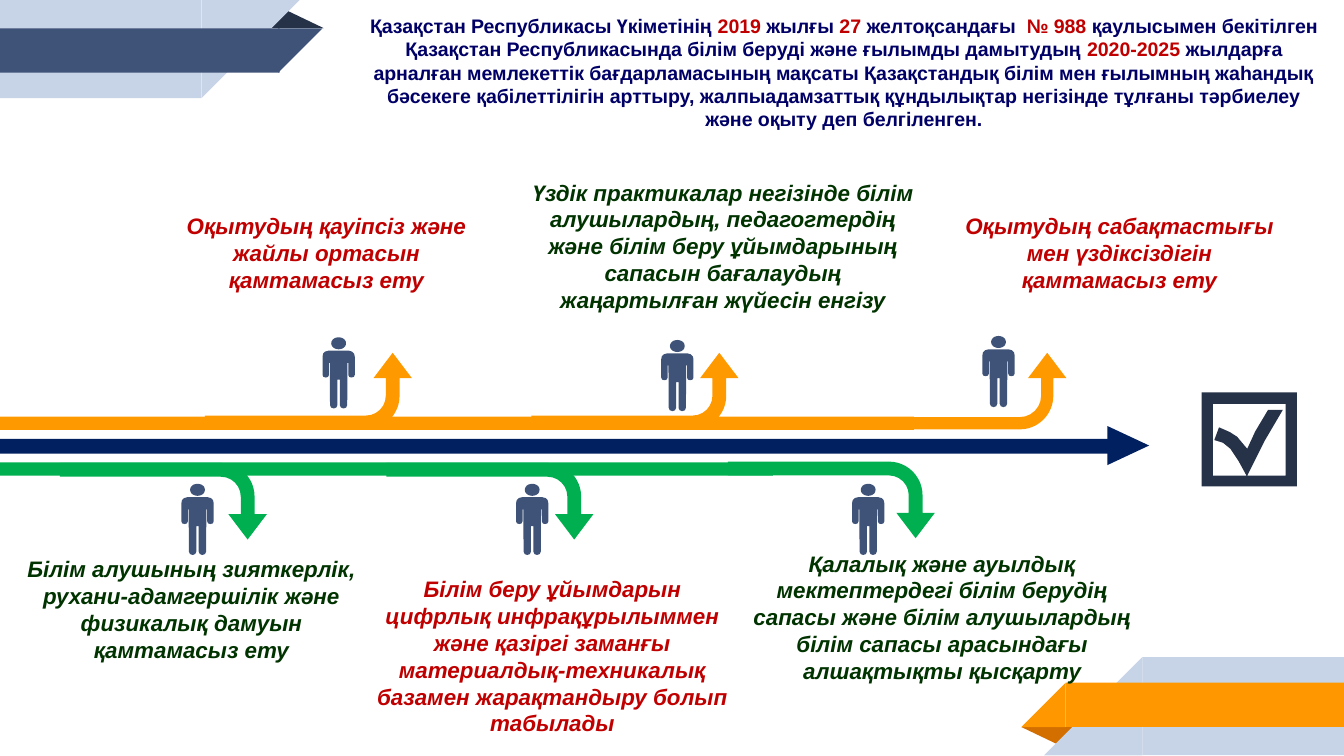
"""Build a slide of education programme goals along a branching arrow."""
from math import cos, pi, sin
from typing import NamedTuple

from pptx import Presentation
from pptx.dml.color import RGBColor
from pptx.enum.shapes import MSO_SHAPE
from pptx.enum.text import MSO_ANCHOR, MSO_AUTO_SIZE, PP_ALIGN
from pptx.util import Inches, Pt

COLORS = {
    "pale": "C7D3E6", "slate": "3F5378", "dark": "263248", "rust": "D26F00",
    "amber": "FF9800", "orange": "FF9900", "green": "00B050", "navy": "002060",
    "ink": "000066", "red": "C00000", "forest": "003300",
}
RECT, TRI = MSO_SHAPE.RECTANGLE, MSO_SHAPE.ISOSCELES_TRIANGLE
WEDGE, BEND = MSO_SHAPE.RIGHT_TRIANGLE, MSO_SHAPE.BENT_ARROW
HEAD = MSO_SHAPE.FLOWCHART_EXTRACT
MILLI = Inches(1) / 1000


class Part(NamedTuple):
    kind: MSO_SHAPE
    box: tuple
    color: str
    turn: int = 0
    flip: bool = False
    adj: tuple = ()


class Goal(NamedTuple):
    box: tuple
    color: str
    text: str


def rgb(name: str) -> RGBColor:
    """Look up a colour by name."""
    return RGBColor.from_string(COLORS[name])


def paint(shape, color: str) -> None:
    """Fill a shape flat, without line or shadow."""
    shape.shadow.inherit = False
    shape.fill.solid()
    shape.fill.fore_color.rgb = rgb(color)
    shape.line.fill.background()


def draw(shapes, part: Part) -> None:
    """Draw a preset shape."""
    shape = shapes.add_shape(part.kind, *map(Inches, part.box))
    paint(shape, part.color)
    shape.rotation = part.turn
    if part.flip:
        shape.element.spPr.xfrm.set("flipH", "1")
    for i, value in enumerate(part.adj):
        shape.adjustments[i] = value


def trace(shapes, x: float, y: float, loops: list, color: str) -> None:
    """Draw closed loops, given in thousandths of an inch from x, y."""
    pen = None
    for loop in loops:
        if pen is None:
            pen = shapes.build_freeform(*loop[0], scale=MILLI)
        else:
            pen.move_to(*loop[0])
        pen.add_line_segments(loop[1:], close=True)
    paint(pen.convert_to_shape(Inches(x), Inches(y)), color)


def write(shapes, goal: Goal) -> None:
    """Write a goal as a centred caption."""
    frame = shapes.add_textbox(*map(Inches, goal.box)).text_frame
    frame.word_wrap = True
    frame.auto_size = MSO_AUTO_SIZE.SHAPE_TO_FIT_TEXT
    frame.margin_left = frame.margin_right = 0
    frame.margin_top = frame.margin_bottom = 0
    para = frame.paragraphs[0]
    para.text = goal.text
    para.alignment = PP_ALIGN.CENTER
    font = para.font
    font.name, font.size, font.bold, font.italic = "Arial", Pt(12), True, True
    font.color.rgb = rgb(goal.color)


CORNERS = [
    Part(TRI, (1.98, 0.07, 0.43, 0.14), "dark", adj=(0.32,)),
    Part(RECT, (0, 0, 1.5, 0.73), "pale", 180, True),
    Part(WEDGE, (1.5, 0, 0.73, 0.73), "pale", 180, True),
    Part(RECT, (0, 0.21, 2.08, 0.33), "slate", 180, True),
    Part(WEDGE, (2.07, 0.21, 0.33, 0.33), "slate", 180, True),
    Part(TRI, (7.6, 5.41, 0.43, 0.14), "rust", 180, adj=(0.32,)),
    Part(RECT, (8.5, 4.89, 1.5, 0.73), "pale", flip=True),
    Part(WEDGE, (7.77, 4.89, 0.73, 0.73), "pale", flip=True),
    Part(RECT, (7.93, 5.08, 2.08, 0.33), "amber", flip=True),
    Part(WEDGE, (7.6, 5.08, 0.33, 0.33), "amber", flip=True),
]
BARS = [
    Part(RECT, (4.12, -0.88, 0.11, 8.4), "navy", 90),
    Part(HEAD, (8.25, 3.16, 0.29, 0.31), "navy", 90),
    Part(RECT, (3.34, -0.26, 0.1, 6.82), "orange", 90),
    Part(RECT, (2.81, 0.6, 0.1, 5.78), "green", 90),
]
BENDS = [
    Part(BEND, (x, y, 0.57, 1.54), color, 90, color == "orange",
         (stem, 0.25, 0.33, 0.44))
    for x, y, color, stem in [
        (6.88, 2.14, "orange", 0.16), (4.44, 2.14, "orange", 0.18),
        (2.01, 2.14, "orange", 0.18), (5.9, 2.95, "green", 0.18),
        (3.36, 2.96, "green", 0.18), (0.93, 2.96, "green", 0.18)]
]
GOALS = [
    Goal((7.17, 1.58, 2.32, 0.61), "red",
         "Оқытудың сабақтастығы мен үздіксіздігін қамтамасыз ету"),
    Goal((3.9, 1.33, 2.96, 1.01), "forest",
         "Үздік практикалар негізінде білім алушылардың, педагогтердің және "
         "білім беру ұйымдарының сапасын бағалаудың жаңартылған жүйесін енгізу"),
    Goal((5.47, 4.09, 3.08, 1.01), "forest",
         "Қалалық және ауылдық мектептердегі білім берудің сапасы және білім "
         "алушылардың білім сапасы арасындағы алшақтықты қысқарту"),
    Goal((2.8, 4.28, 2.62, 1.21), "red",
         "Білім беру ұйымдарын цифрлық инфрақұрылыммен және қазіргі заманғы "
         "материалдық-техникалық базамен жарақтандыру болып табылады"),
    Goal((0.2, 4.13, 2.45, 0.81), "forest",
         "Білім алушының зияткерлік, рухани-адамгершілік және физикалық "
         "дамуын қамтамасыз ету"),
    Goal((1.38, 1.58, 2.1, 0.61), "red",
         "Оқытудың қауіпсіз және жайлы ортасын қамтамасыз ету"),
]
TITLE = [
    ("Қазақстан Республикасы Үкіметінің ", "ink"), ("2019", "red"),
    (" жылғы ", "ink"), ("27", "red"), (" желтоқсандағы  ", "ink"),
    ("№ 988 ", "red"),
    ("қаулысымен бекітілген Қазақстан Республикасында білім беруді және "
     "ғылымды дамытудың ", "ink"), ("2020-2025", "red"),
    (" жылдарға арналған мемлекеттік бағдарламасының мақсаты Қазақстандық "
     "білім мен ғылымның жаһандық бәсекеге қабілеттілігін арттыру, "
     "жалпыадамзаттық құндылықтар негізінде тұлғаны тәрбиелеу және оқыту "
     "деп белгіленген.", "ink"),
]
HALF = [(75, 100), (100, 107), (115, 122), (120, 145), (120, 280), (113, 295),
        (95, 300), (79, 295), (72, 280), (72, 190), (66, 190), (64, 505),
        (56, 523), (36, 530), (17, 523), (9, 505), (9, 315)]
BODY = HALF + [(-x, y) for x, y in reversed(HALF)]
FACE = [(round(55 * cos(k * pi / 12)), round(45 + 45 * sin(k * pi / 12)))
        for k in range(24)]
PEOPLE = [(2.52, 2.51), (5.04, 2.53), (7.43, 2.5),
          (1.47, 3.6), (3.96, 3.6), (6.46, 3.6)]
FRAME = [(0, 0), (710, 0), (710, 700), (0, 700)]
TICK = [(85, 85), (85, 620), (335, 620), (275, 510), (215, 420), (160, 375),
        (95, 355), (130, 260), (210, 295), (265, 330), (340, 420),
        (400, 290), (495, 130), (605, 130), (470, 360), (340, 620),
        (625, 620), (625, 85)]


def main() -> None:
    """Build and save the slide."""
    deck = Presentation()
    deck.slide_width = Inches(10)
    deck.slide_height = deck.slide_width * 9 // 16
    slide = deck.slides.add_slide(deck.slide_layouts[5])
    shapes = slide.shapes
    title = shapes.title
    title.left, title.top = Inches(2.64), Inches(0.05)
    title.width, title.height = Inches(7.28), Inches(0.98)
    frame = title.text_frame
    frame.word_wrap, frame.auto_size = True, MSO_AUTO_SIZE.NONE
    frame.vertical_anchor = MSO_ANCHOR.TOP
    para = frame.paragraphs[0]
    para.alignment = PP_ALIGN.CENTER
    font = para.font
    font.name, font.size, font.bold = "Arial", Pt(10.5), True
    for text, color in TITLE:
        run = para.add_run()
        run.text = text
        run.font.color.rgb = rgb(color)
    for part in CORNERS + BARS + BENDS:
        draw(shapes, part)
    for goal in GOALS:
        write(shapes, goal)
    for x, y in PEOPLE:
        trace(shapes, x, y, [BODY, FACE], "slate")
    trace(shapes, 8.94, 2.92, [FRAME, TICK], "dark")
    deck.save("out.pptx")


if __name__ == "__main__":
    main()
